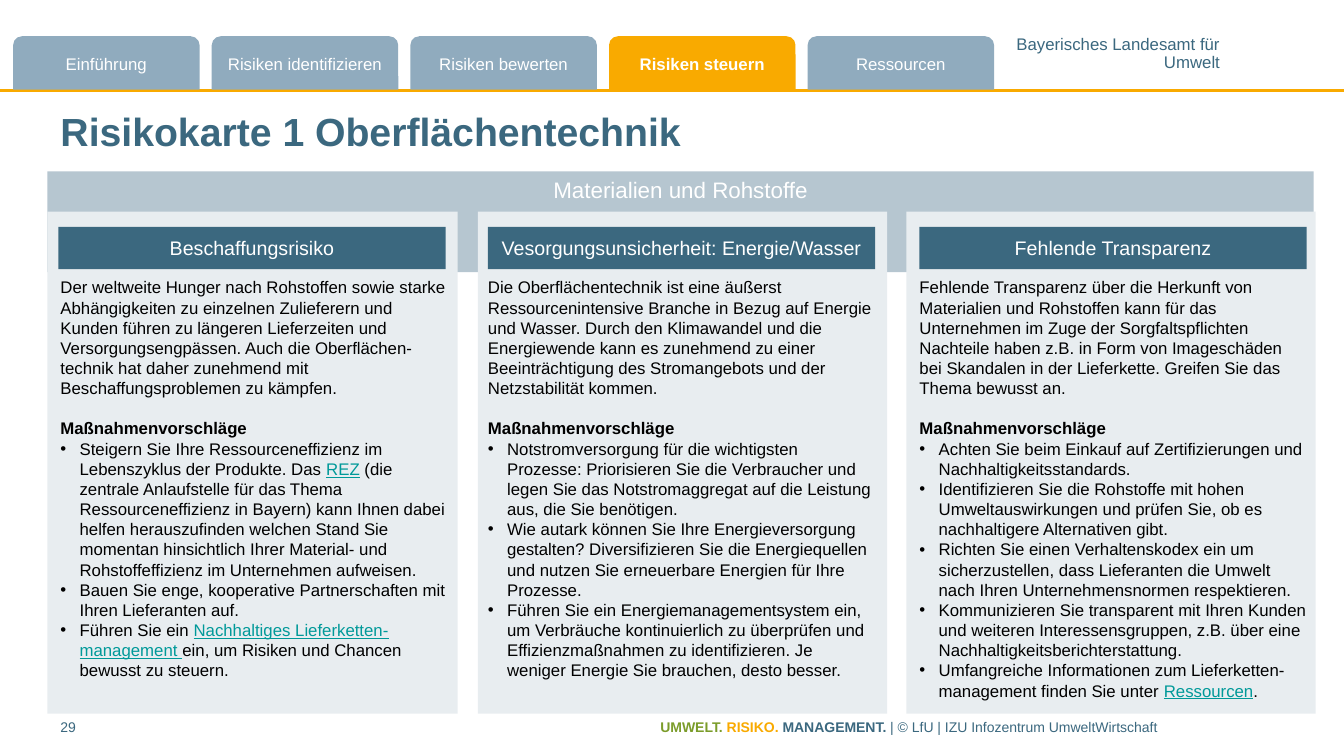
from lxml import etree
from pptx import Presentation
from pptx.dml.color import RGBColor
from pptx.enum import shapes as sh, text as tx
from pptx.oxml.ns import qn
from pptx.util import Inches, Pt

PETROL = RGBColor(0x3B, 0x68, 0x7F)
TAB_BLUE = RGBColor(0x90, 0xAB, 0xBE)
BAND_BLUE = RGBColor(0xB6, 0xC6, 0xD0)
PANEL_GREY = RGBColor(0xE8, 0xED, 0xF0)
ORANGE = RGBColor(0xF9, 0xAA, 0x00)
GREEN = RGBColor(0x7B, 0x9C, 0x2A)
LINK = RGBColor(0x00, 0x99, 0x99)
BLACK = RGBColor(0, 0, 0)
WHITE = RGBColor(0xFF, 0xFF, 0xFF)

LEFT, CENTER, RIGHT = tx.PP_ALIGN.LEFT, tx.PP_ALIGN.CENTER, tx.PP_ALIGN.RIGHT
TOP, MIDDLE = tx.MSO_ANCHOR.TOP, tx.MSO_ANCHOR.MIDDLE

TABS = ["Einführung", "Risiken identifizieren", "Risiken bewerten", "Risiken steuern", "Ressourcen"]
ACTIVE_TAB = "Risiken steuern"

COLUMNS = [
    (0.47, 4.07, 0.58, 0.6, "Beschaffungsrisiko",
     "Der weltweite Hunger nach Rohstoffen sowie starke Abhängigkeiten zu einzelnen Zulieferern und "
     "Kunden führen zu längeren Lieferzeiten und Versorgungsengpässen. Auch die Oberflächen-technik "
     "hat daher zunehmend mit Beschaffungsproblemen zu kämpfen.",
     [["Steigern Sie Ihre Ressourceneffizienz im Lebenszyklus der Produkte. Das ",
       ("REZ", LINK),
       " (die zentrale Anlaufstelle für das Thema Ressourceneffizienz in Bayern) kann Ihnen dabei "
       "helfen herauszufinden welchen Stand Sie momentan hinsichtlich Ihrer Material- und "
       "Rohstoffeffizienz im Unternehmen aufweisen."],
      ["Bauen Sie enge, kooperative Partnerschaften mit Ihren Lieferanten auf."],
      ["Führen Sie ein ", ("Nachhaltiges Lieferketten-management ", LINK),
       "ein, um Risiken und Chancen bewusst zu steuern."]]),
    (4.74, 4.06, 4.84, 4.84, "Vesorgungsunsicherheit: Energie/Wasser",
     "Die Oberflächentechnik ist eine äußerst Ressourcenintensive Branche in Bezug auf Energie und "
     "Wasser. Durch den Klimawandel und die Energiewende kann es zunehmend zu einer "
     "Beeinträchtigung des Stromangebots und der Netzstabilität kommen.",
     [["Notstromversorgung für die wichtigsten Prozesse: Priorisieren Sie die Verbraucher und legen "
       "Sie das Notstromaggregat auf die Leistung aus, die Sie benötigen."],
      ["Wie autark können Sie Ihre Energieversorgung gestalten? Diversifizieren Sie die "
       "Energiequellen und nutzen Sie erneuerbare Energien für Ihre Prozesse."],
      ["Führen Sie ein Energiemanagementsystem ein, um Verbräuche kontinuierlich zu überprüfen und "
       "Effizienzmaßnahmen zu identifizieren. Je weniger Energie Sie brauchen, desto besser."]]),
    (8.99, 4.06, 9.12, 9.12, "Fehlende Transparenz",
     "Fehlende Transparenz über die Herkunft von Materialien und Rohstoffen kann für das Unternehmen "
     "im Zuge der Sorgfaltspflichten Nachteile haben z.B. in Form von Imageschäden bei Skandalen in "
     "der Lieferkette. Greifen Sie das Thema bewusst an.",
     [["Achten Sie beim Einkauf auf Zertifizierungen und Nachhaltigkeitsstandards."],
      ["Identifizieren Sie die Rohstoffe mit hohen Umweltauswirkungen und prüfen Sie, ob es "
       "nachhaltigere Alternativen gibt."],
      ["Richten Sie einen Verhaltenskodex ein um sicherzustellen, dass Lieferanten die Umwelt nach "
       "Ihren Unternehmensnormen respektieren."],
      ["Kommunizieren Sie transparent mit Ihren Kunden und weiteren Interessensgruppen, z.B. über "
       "eine Nachhaltigkeitsberichterstattung."],
      ["Umfangreiche Informationen zum Lieferketten-management finden Sie unter ",
       ("Ressourcen", LINK), "."]]),
]


def write(paragraph, pieces, size=12, color=BLACK, bold=False, align=LEFT,
          spacing=None, before=None, bullet=False):
    if bullet:
        props = paragraph._p.get_or_add_pPr()
        props.set("marL", str(Inches(0.19)))
        props.set("indent", str(-Inches(0.19)))
        etree.SubElement(props, qn("a:buFont")).set("typeface", "Arial")
        etree.SubElement(props, qn("a:buChar")).set("char", "•")
    paragraph.alignment = align
    if spacing:
        paragraph.line_spacing = spacing
    if before:
        paragraph.space_before = Pt(before)
    for piece in [pieces] if isinstance(pieces, str) else pieces:
        words, tint = (piece, color) if isinstance(piece, str) else piece[:2]
        run = paragraph.add_run()
        run.text = words
        run.font.name = "Arial"
        run.font.size = Pt(size)
        run.font.bold = piece[2] if len(piece) == 3 and isinstance(piece, tuple) else bold
        run.font.color.rgb = tint
        if tint == LINK:
            run.font.underline = True


def set_frame(shape, anchor, side, edge=0.05):
    frame = shape.text_frame
    frame.word_wrap = True
    frame.vertical_anchor = anchor
    frame.margin_left = frame.margin_right = Inches(side)
    frame.margin_top = frame.margin_bottom = Inches(edge)
    return frame


def add_text_area(slide, x, y, w, h, anchor=TOP, edge=0.05):
    area = slide.shapes.add_textbox(Inches(x), Inches(y), Inches(w), Inches(h))
    return set_frame(area, anchor, 0, edge)


def add_block(slide, x, y, w, h, fill, words="", kind=sh.MSO_SHAPE.RECTANGLE,
              anchor=MIDDLE, side=0.1, **style):
    block = slide.shapes.add_shape(kind, Inches(x), Inches(y), Inches(w), Inches(h))
    block.shadow.inherit = False
    block.fill.solid()
    block.fill.fore_color.rgb = fill
    block.line.fill.background()
    if words:
        frame = set_frame(block, anchor, side)
        write(frame.paragraphs[0], words, color=WHITE, align=CENTER, **style)


def add_navigation(slide, x, y, w, h, pitch):
    rule = slide.shapes.add_connector(sh.MSO_CONNECTOR.STRAIGHT, 0, Inches(0.9), Inches(13.33), Inches(0.9))
    rule.line.color.rgb = ORANGE
    rule.line.width = Pt(2)
    etree.SubElement(rule._element.spPr, qn("a:effectLst"))
    for i, label in enumerate(TABS):
        active = label == ACTIVE_TAB
        add_block(slide, x + i * pitch, y, w, h, ORANGE if active else TAB_BLUE, label,
                  kind=sh.MSO_SHAPE.ROUND_2_SAME_RECTANGLE, side=0.04, bold=active)
    agency = add_text_area(slide, x + 5 * pitch + 0.09, y + 0.01, 2.03, 0.34, edge=0)
    write(agency.paragraphs[0], "Bayerisches Landesamt für", color=PETROL, align=RIGHT, spacing=0.85)
    write(agency.add_paragraph(), "Umwelt", color=PETROL, align=RIGHT, spacing=0.85)


def add_column(slide, y, h, column):
    x, w, heading_x, body_x, heading, intro, measures = column
    add_block(slide, x, y, w, h, PANEL_GREY)
    add_block(slide, heading_x, y + 0.15, 3.84, 0.42, PETROL, heading, size=14)
    body = add_text_area(slide, body_x, y + 0.6, 3.84, h - 0.64)
    write(body.paragraphs[0], intro)
    write(body.add_paragraph(), "Maßnahmenvorschläge", bold=True, before=14.4)
    for measure in measures:
        write(body.add_paragraph(), measure, bullet=True)


def add_risk_card(slide, x, y, w, h):
    add_block(slide, x, y, w, 1, BAND_BLUE, "Materialien und Rohstoffe", anchor=TOP, size=16)
    for column in COLUMNS:
        add_column(slide, y + 0.4, h - 0.4, column)


def add_footer(slide, x, y):
    number = add_text_area(slide, x, y, 0.7, 0.31)
    write(number.paragraphs[0], "29", size=10, color=PETROL)
    imprint = add_text_area(slide, x + 5.95, y, 6.36, 0.31)
    write(imprint.paragraphs[0],
          [("UMWELT. ", GREEN, True), ("RISIKO. ", ORANGE, True), ("MANAGEMENT. ", PETROL, True),
           "| © LfU | IZU Infozentrum UmweltWirtschaft"], size=10, color=PETROL)


def main():
    deck = Presentation()
    deck.slide_width, deck.slide_height = Inches(13.33), Inches(7.5)
    slide = deck.slides.add_slide(deck.slide_layouts[6])
    add_navigation(slide, 0.13, 0.36, 1.85, 0.53, 1.97)
    title = add_text_area(slide, 0.6, 1.02, 12.31, 0.55, anchor=MIDDLE)
    write(title.paragraphs[0], "Risikokarte 1 Oberflächentechnik", size=28, color=PETROL, bold=True)
    add_risk_card(slide, 0.47, 1.7, 12.56, 5.38)
    add_footer(slide, 0.6, 7.08)
    deck.save("out.pptx")


if __name__ == "__main__":
    main()
